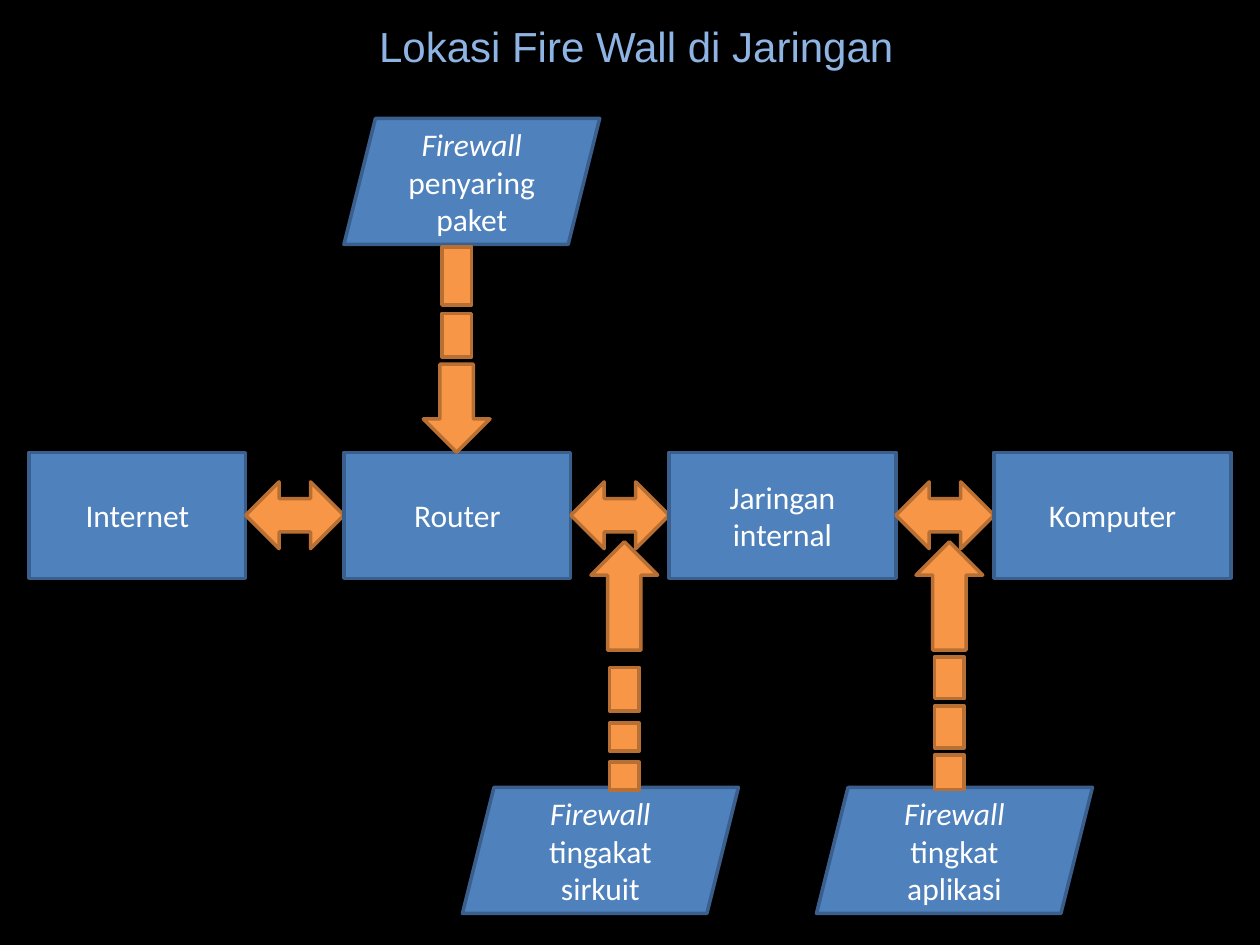
from pptx import Presentation
from pptx.dml.color import RGBColor
from pptx.enum.shapes import MSO_SHAPE as Kind
from pptx.enum.text import MSO_ANCHOR as Anchor, PP_ALIGN as Align
from pptx.util import Inches, Pt

HUES = {
    "back": "000000", "title": "8EB4E3", "text": "FFFFFF",
    "node": "4F81BD", "edge": "3A5F8C",
    "arrow": "F79646", "rim": "B76F34",
}


def hue(name):
    return RGBColor.from_string(HUES[name])


def draw(slide, kind, box, fill, line):
    shape = slide.shapes.add_shape(kind, *map(Inches, box))
    shape.shadow.inherit = False
    shape.fill.solid()
    shape.fill.fore_color.rgb = hue(fill)
    shape.line.color.rgb = hue(line)
    shape.line.width = Pt(2)
    return shape


def write(shape, runs, size, face, tint):
    frame = shape.text_frame
    frame.word_wrap = True
    frame.vertical_anchor = Anchor.MIDDLE
    para = frame.paragraphs[0]
    para.alignment = Align.CENTER
    para.font.size = Pt(size)
    para.font.name = face
    para.font.color.rgb = hue(tint)
    for text, slant in runs:
        run = para.add_run()
        run.text = text
        if slant:
            run.font.italic = True


def add_title(slide, box, text):
    shape = slide.shapes.add_textbox(*map(Inches, box))
    write(shape, [(text, False)], 24, "Arial", "title")


def add_node(slide, kind, box, runs):
    shape = draw(slide, kind, box, "node", "edge")
    write(shape, runs, 18, "Calibri", "text")


def add_chain(slide, box, nodes, gap):
    left, top, width, height = box
    deep = 0.53
    for i, (text, wide) in enumerate(nodes):
        add_node(slide, Kind.RECTANGLE, (left, top, wide, height), [(text, False)])
        left += wide
        if i < len(nodes) - 1:
            mid = top + height / 2
            draw(slide, Kind.LEFT_RIGHT_ARROW,
                 (left, mid - deep / 2, gap, deep), "arrow", "rim")
        left += gap


def add_link(slide, kind, box, dashes):
    left, top, width, height = box
    mid = left + width / 2
    for y, size in dashes:
        dash = draw(slide, Kind.MATH_MINUS,
                    (mid - size / 2, y - 0.5, size, 1), "arrow", "rim")
        dash.rotation = 90
    draw(slide, kind, box, "arrow", "rim")


def main():
    deck = Presentation()
    deck.slide_width, deck.slide_height = Inches(10), Inches(7.5)
    slide = deck.slides.add_slide(deck.slide_layouts[6])
    slide.background.fill.solid()
    slide.background.fill.fore_color.rgb = hue("back")

    add_title(slide, (0.55, 0, 9, 0.72), "Lokasi Fire Wall di Jaringan")
    nodes = [("Internet", 1.72), ("Router", 1.8),
             ("Jaringan internal", 1.8), ("Komputer", 1.88)]
    add_chain(slide, (0.23, 3.59, 9.54, 1), nodes, 0.78)

    walls = [
        ((2.73, 0.94, 2.03, 1), "Firewall ", "penyaring paket"),
        ((3.67, 6.25, 2.19, 1), "Firewall", " tingakat sirkuit"),
        ((6.48, 6.25, 2.19, 1), "Firewall", " tingkat aplikasi"),
    ]
    for box, head, tail in walls:
        add_node(slide, Kind.PARALLELOGRAM, box, [(head, True), (tail, False)])

    links = [
        (Kind.DOWN_ARROW, (3.36, 2.89, 0.53, 0.7), [(2.19, 0.63), (2.66, 0.47)]),
        (Kind.UP_ARROW, (4.69, 4.3, 0.53, 0.86),
         [(6.16, 0.3), (5.85, 0.3), (5.47, 0.47)]),
        (Kind.UP_ARROW, (7.27, 4.3, 0.53, 0.86),
         [(6.13, 0.37), (5.77, 0.45), (5.38, 0.45)]),
    ]
    for kind, box, dashes in links:
        add_link(slide, kind, box, dashes)

    deck.save("out.pptx")


if __name__ == "__main__":
    main()
